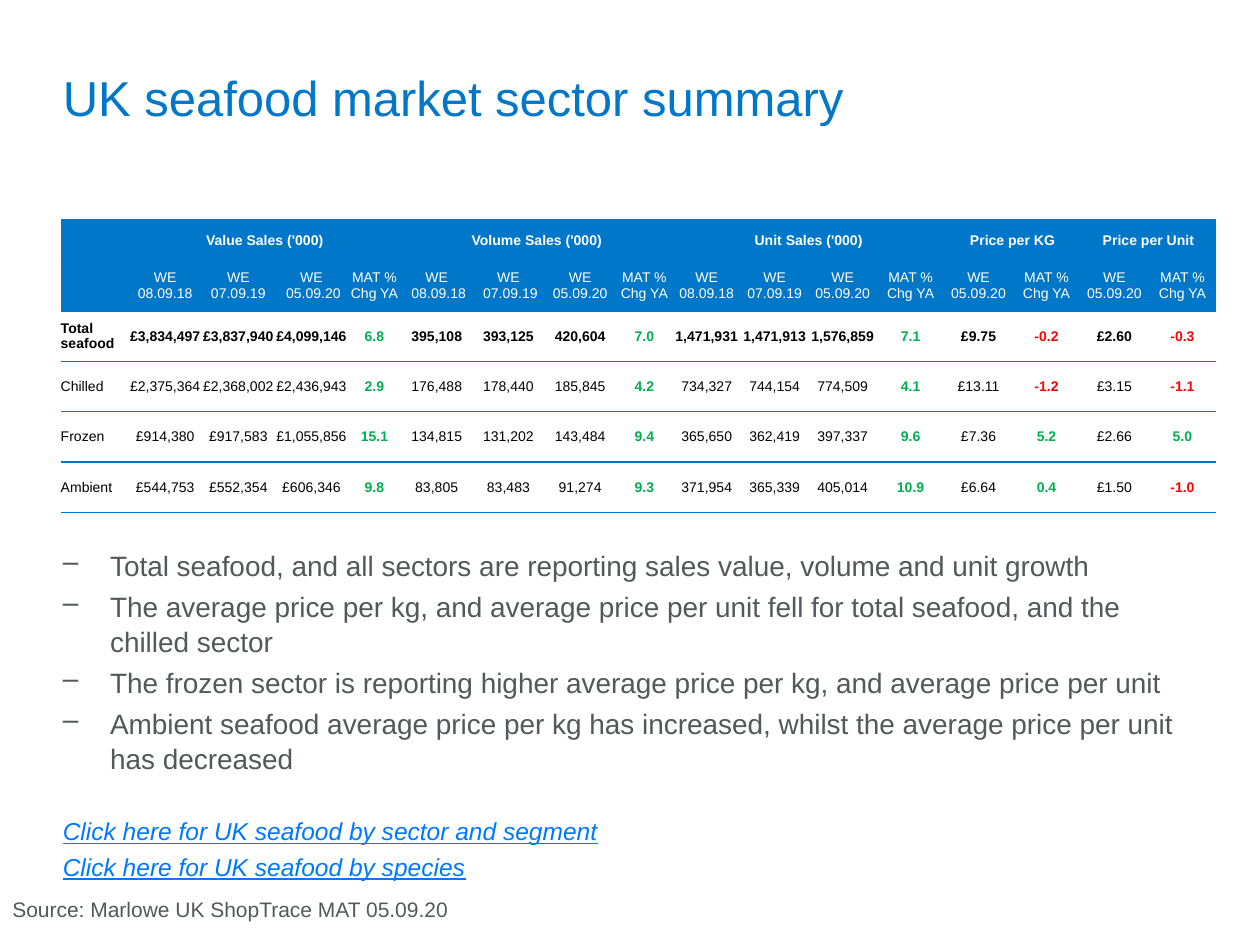
from lxml import etree
from pptx import Presentation
from pptx.dml.color import RGBColor
from pptx.enum import text
from pptx.oxml import ns
from pptx.util import Pt

HUES = {"blue": "0077C8", "white": "FFFFFF", "black": "000000", "up": "00B050",
        "down": "FF0000", "grey": "54585A", "link": "0077FF"}
FACE = "Arial"
GROUPS = [("Value Sales ('000)", 4), ("Volume Sales ('000)", 4),
          ("Unit Sales ('000)", 4), ("Price per KG", 2), ("Price per Unit", 2)]
CHANGE = "MAT % Chg YA"
HEADS = ["", "WE\n08.09.18", "WE\n07.09.19", "WE\n 05.09.20", CHANGE,
         "WE\n 08.09.18", "WE\n 07.09.19", "WE\n05.09.20", CHANGE,
         "WE 08.09.18", "WE 07.09.19", "WE 05.09.20", CHANGE,
         "WE 05.09.20", CHANGE, "WE 05.09.20", CHANGE]
ROWS = [
    ["Total seafood", "£3,834,497", "£3,837,940", "£4,099,146", "6.8",
     "395,108", "393,125", "420,604", "7.0",
     "1,471,931", "1,471,913", "1,576,859", "7.1", "£9.75", "-0.2", "£2.60", "-0.3"],
    ["Chilled", "£2,375,364", "£2,368,002", "£2,436,943", "2.9",
     "176,488", "178,440", "185,845", "4.2",
     "734,327", "744,154", "774,509", "4.1", "£13.11", "-1.2", "£3.15", "-1.1"],
    ["Frozen", "£914,380", "£917,583", "£1,055,856", "15.1",
     "134,815", "131,202", "143,484", "9.4",
     "365,650", "362,419", "397,337", "9.6", "£7.36", "5.2", "£2.66", "5.0"],
    ["Ambient", "£544,753", "£552,354", "£606,346", "9.8",
     "83,805", "83,483", "91,274", "9.3",
     "371,954", "365,339", "405,014", "10.9", "£6.64", "0.4", "£1.50", "-1.0"],
]
WIDTHS = [38.85] + [41.8] * 3 + [30.2] + [41] * 3 + [32.4] + [38.85] * 8
HEIGHTS = [23.4] + [28.8] * 5
POINTS = [
    "Total seafood, and all sectors are reporting sales value, volume and unit growth",
    "The average price per kg, and average price per unit fell for total seafood, and the chilled sector",
    "The frozen sector is reporting higher average price per kg, and average price per unit",
    "Ambient seafood average price per kg has increased, whilst the average price per unit has decreased",
]
LINKS = ["Click here for UK seafood by sector and segment",
         "Click here for UK seafood by species"]


def style(para, size, hue, bold=False):
    font = para.font
    font.name, font.size, font.bold = FACE, Pt(size), bold
    font.color.rgb = RGBColor.from_string(HUES[hue])


def add_box(slide, box):
    frame = slide.shapes.add_textbox(*map(Pt, box)).text_frame
    frame.word_wrap = True
    return frame


def add_line(slide, box, words, size, hue, anchor):
    frame = add_box(slide, box)
    frame.vertical_anchor = anchor
    frame.text = words
    style(frame.paragraphs[0], size, hue)


def set_edges(cell):
    props = cell._tc.get_or_add_tcPr()
    for place, side in enumerate("LRTB"):
        edge = etree.Element(ns.qn(f"a:ln{side}"), w=str(Pt(1)))
        if side in "LR":
            etree.SubElement(edge, ns.qn("a:noFill"))
        else:
            fill = etree.SubElement(edge, ns.qn("a:solidFill"))
            etree.SubElement(fill, ns.qn("a:srgbClr"), val=HUES["blue"])
        props.insert(place, edge)


def fill_cell(cell, words, hue, bold, head, left):
    cell.margin_left = cell.margin_right = cell.margin_top = cell.margin_bottom = 0
    cell.vertical_anchor = text.MSO_ANCHOR.MIDDLE
    if head:
        cell.fill.solid()
        cell.fill.fore_color.rgb = RGBColor.from_string(HUES["blue"])
    else:
        cell.fill.background()
    set_edges(cell)
    cell.text = words
    for para in cell.text_frame.paragraphs:
        para.alignment = text.PP_ALIGN.LEFT if left else text.PP_ALIGN.CENTER
        style(para, 8, hue, bold)


def add_sales(slide, box):
    names = [""]
    for name, span in GROUPS:
        names += [name] + [""] * (span - 1)
    grid = [names, HEADS] + ROWS
    table = slide.shapes.add_table(len(grid), len(HEADS), *map(Pt, box)).table
    table.first_row = table.horz_banding = False
    for col, width in zip(table.columns, WIDTHS):
        col.width = Pt(width)
    for row, height in zip(table.rows, HEIGHTS):
        row.height = Pt(height)
    for r, line in enumerate(grid):
        for c, words in enumerate(line):
            head = r < 2
            change = not head and HEADS[c] == CHANGE
            hue = "white" if head else "black"
            if change:
                hue = "down" if words.startswith("-") else "up"
            bold = r in (0, 2) or change
            fill_cell(table.cell(r, c), words, hue, bold, head, c == 0)
    start = 1
    for name, span in GROUPS:
        table.cell(0, start).merge(table.cell(0, start + span - 1))
        start += span


def add_notes(slide, box):
    frame = add_box(slide, box)
    for i, words in enumerate(POINTS + LINKS):
        para = frame.paragraphs[0] if i == 0 else frame.add_paragraph()
        para.text = words
        para.line_spacing = 1.05
        if i < len(POINTS):
            para.space_before = Pt(3.2 if i else 0)
            props = para._p.get_or_add_pPr()
            props.set("marL", str(Pt(27)))
            props.set("indent", str(Pt(-27)))
            etree.SubElement(props, ns.qn("a:buChar"), char="–")
            style(para, 16, "grey")
        else:
            para.space_before = Pt(22.5 if i == len(POINTS) else 2.8)
            style(para, 14, "link")
            para.font.italic = para.font.underline = True


def main():
    deck = Presentation()
    deck.slide_width, deck.slide_height = Pt(720), Pt(540)
    slide = deck.slides.add_slide(deck.slide_layouts[6])
    add_line(slide, (28.8, 21.6, 660, 67.7), "UK seafood market sector summary",
             28, "blue", text.MSO_ANCHOR.MIDDLE)
    add_sales(slide, (34.7, 125.5, sum(WIDTHS), sum(HEIGHTS)))
    add_notes(slide, (28.8, 309, 660, 167))
    add_line(slide, (0, 509, 720, 21.6), "Source: Marlowe UK ShopTrace MAT 05.09.20",
             12, "grey", text.MSO_ANCHOR.TOP)
    deck.save("out.pptx")


if __name__ == "__main__":
    main()
